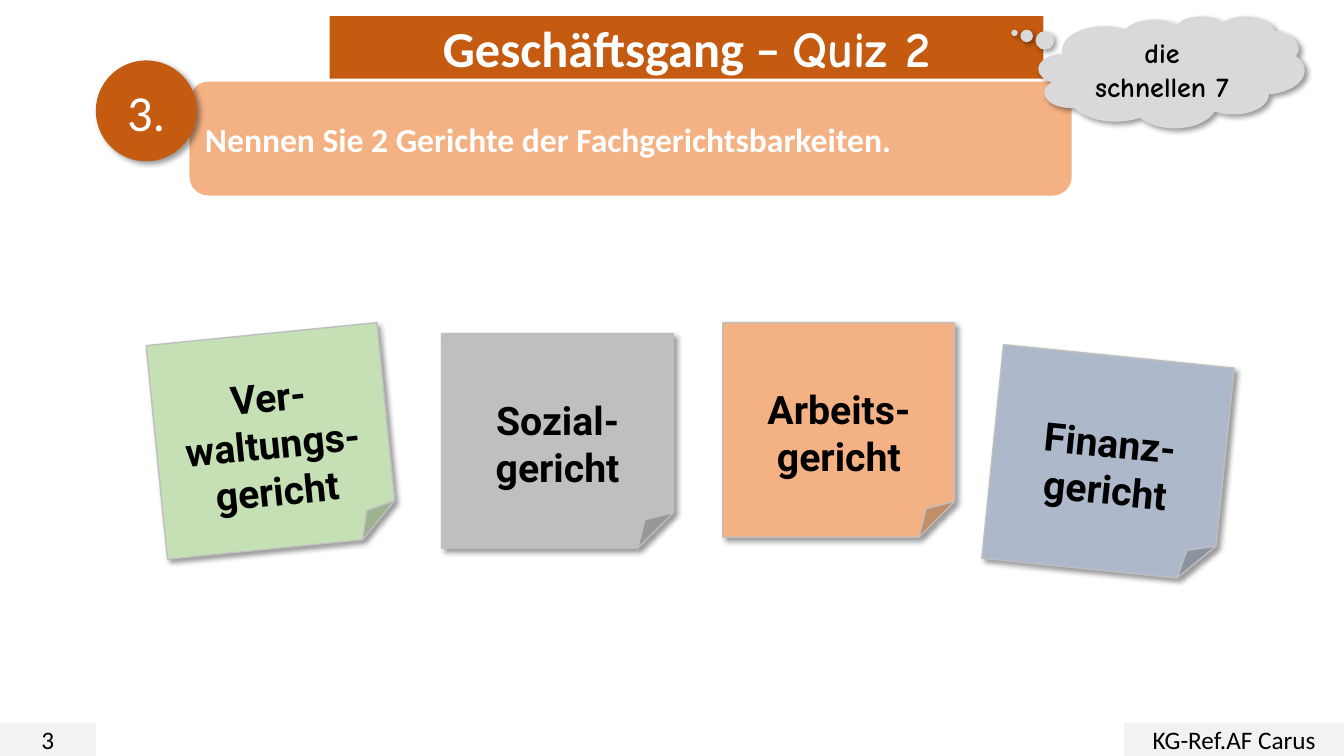
"""Build the quiz slide on courts of special jurisdiction."""
import lxml.etree
import pptx
import pptx.enum.shapes
import pptx.enum.text
import pptx.oxml
import pptx.oxml.ns
import pptx.util

WIDTH = pptx.util.Inches(13.33)
HEIGHT = pptx.util.Inches(7.5)
KIND = pptx.enum.shapes.MSO_SHAPE
ALIGN = pptx.enum.text.PP_ALIGN
COLOURS = {
    "rust": "C55A11", "peach": "F4B183", "pale": "F2F2F2", "cloud": "D9D9D9",
    "green": "C5E0B4", "grey": "BFBFBF", "blue": "ADB9CA",
    "white": "FFFFFF", "black": "000000",
}
NOTE_SIZE = (17.25, 28.4)
NOTES = [
    ("Ver-\nwaltungs-gericht", "green", 11.63, 44.13, 354.3),
    ("Sozial-\ngericht", "grey", 32.86, 44.13, 0),
    ("Arbeits-\ngericht", "peach", 53.79, 42.67, 0),
    ("Finanz-gericht", "blue", 73.82, 47.07, 5.8),
]


def colour(name):
    """Return the named colour."""
    return pptx.dml.color.RGBColor.from_string(COLOURS[name])


def area(left, top, width, height):
    """Turn percentages of the slide into lengths."""
    return (int(WIDTH * left / 100), int(HEIGHT * top / 100),
            int(WIDTH * width / 100), int(HEIGHT * height / 100))


def paint(shape, fill):
    """Fill a shape and remove its outline."""
    shape.fill.solid()
    shape.fill.fore_color.rgb = colour(fill)
    shape.line.fill.background()


def style_span(span, size, ink, font, bold):
    """Format one run of text."""
    span.font.size = pptx.util.Pt(size)
    span.font.name = font
    span.font.bold = bold
    span.font.color.rgb = colour(ink)


def write(shape, text, size, ink="black", font="Calibri", bold=False,
          align=ALIGN.CENTER):
    """Put formatted, vertically centred text in a shape."""
    frame = shape.text_frame
    frame.text = text
    frame.word_wrap = True
    frame.auto_size = pptx.enum.text.MSO_AUTO_SIZE.NONE
    frame.vertical_anchor = pptx.enum.text.MSO_ANCHOR.MIDDLE
    for para in frame.paragraphs:
        para.alignment = align
        for span in para.runs:
            style_span(span, size, ink, font, bold)


def add_box(shapes, kind, place, fill):
    """Add a filled preset shape without shadow."""
    box = shapes.add_shape(kind, *area(*place))
    box.shadow.inherit = False
    paint(box, fill)
    return box


def add_shadow(shape):
    """Cast a soft shadow towards the lower right."""
    effects = shape._element.spPr.find(pptx.oxml.ns.qn("a:effectLst"))
    effects.append(pptx.oxml.parse_xml(
        f'<a:outerShdw {pptx.oxml.ns.nsdecls("a")} blurRad="50800" '
        'dist="38100" dir="2700000" algn="tl" rotWithShape="0">'
        f'<a:srgbClr val="{COLOURS["black"]}"><a:alpha val="40000"/>'
        '</a:srgbClr></a:outerShdw>'))


def add_title(page):
    """Format the title placeholder as a rounded banner."""
    title = page.shapes.title
    title.left, title.top, title.width, title.height = area(
        24.53, 2.13, 53.11, 8.27)
    outline = lxml.etree.SubElement(
        title._element.spPr, pptx.oxml.ns.qn("a:prstGeom"), prst="roundRect")
    lxml.etree.SubElement(outline, pptx.oxml.ns.qn("a:avLst"))
    paint(title, "rust")
    write(title, "Geschäftsgang – ", 36, "white", bold=True)
    span = title.text_frame.paragraphs[0].add_run()
    span.text = "Quiz 2"
    style_span(span, 36, "white", "Comic Neue", True)


def add_footer(page):
    """Add the page number and the author label."""
    for text, left, width in (("3", 0, 7.13),
                              ("KG-Ref.AF Carus", 83.65, 16.35)):
        box = add_box(page.shapes, KIND.RECTANGLE,
                      (left, 95.6, width, 4.4), "pale")
        write(box, text, 18)


def add_question(page):
    """Add the question bar grouped with its number."""
    group = page.shapes.add_group_shape()
    bar = add_box(group.shapes, KIND.ROUNDED_RECTANGLE,
                  (14.1, 10.8, 65.64, 15.07), "peach")
    write(bar, "Nennen Sie 2 Gerichte der Fachgerichtsbarkeiten.", 24,
          "white", bold=True, align=ALIGN.LEFT)
    number = add_box(group.shapes, KIND.OVAL, (7.13, 8, 7.5, 13.33), "rust")
    add_shadow(number)
    write(number, "3.", 36, "white")


def add_cloud(page):
    """Add the thought cloud."""
    cloud = add_box(page.shapes, KIND.CLOUD_CALLOUT,
                    (77.27, 2.13, 19.8, 14.8), "cloud")
    cloud.adjustments[0] = -0.59
    cloud.adjustments[1] = -0.35
    add_shadow(cloud)
    write(cloud, "die schnellen 7", 20, font="Comic Neue", bold=True)


def add_note(page, text, fill, left, top, rotation):
    """Add one sticky note with an answer."""
    note = add_box(page.shapes, KIND.FOLDED_CORNER,
                   (left, top, *NOTE_SIZE), fill)
    note.rotation = rotation
    note.line.color.rgb = colour("grey")
    note.line.width = pptx.util.Pt(1)
    add_shadow(note)
    write(note, text, 28, font="Roboto", bold=True)
    note.text_frame.margin_top = int(HEIGHT * 0.06)


def main():
    """Build and save the deck."""
    deck = pptx.Presentation()
    deck.slide_width, deck.slide_height = WIDTH, HEIGHT
    page = deck.slides.add_slide(deck.slide_layouts[5])
    add_title(page)
    add_footer(page)
    add_question(page)
    add_cloud(page)
    for note in NOTES:
        add_note(page, *note)
    deck.save("out.pptx")


if __name__ == "__main__":
    main()
